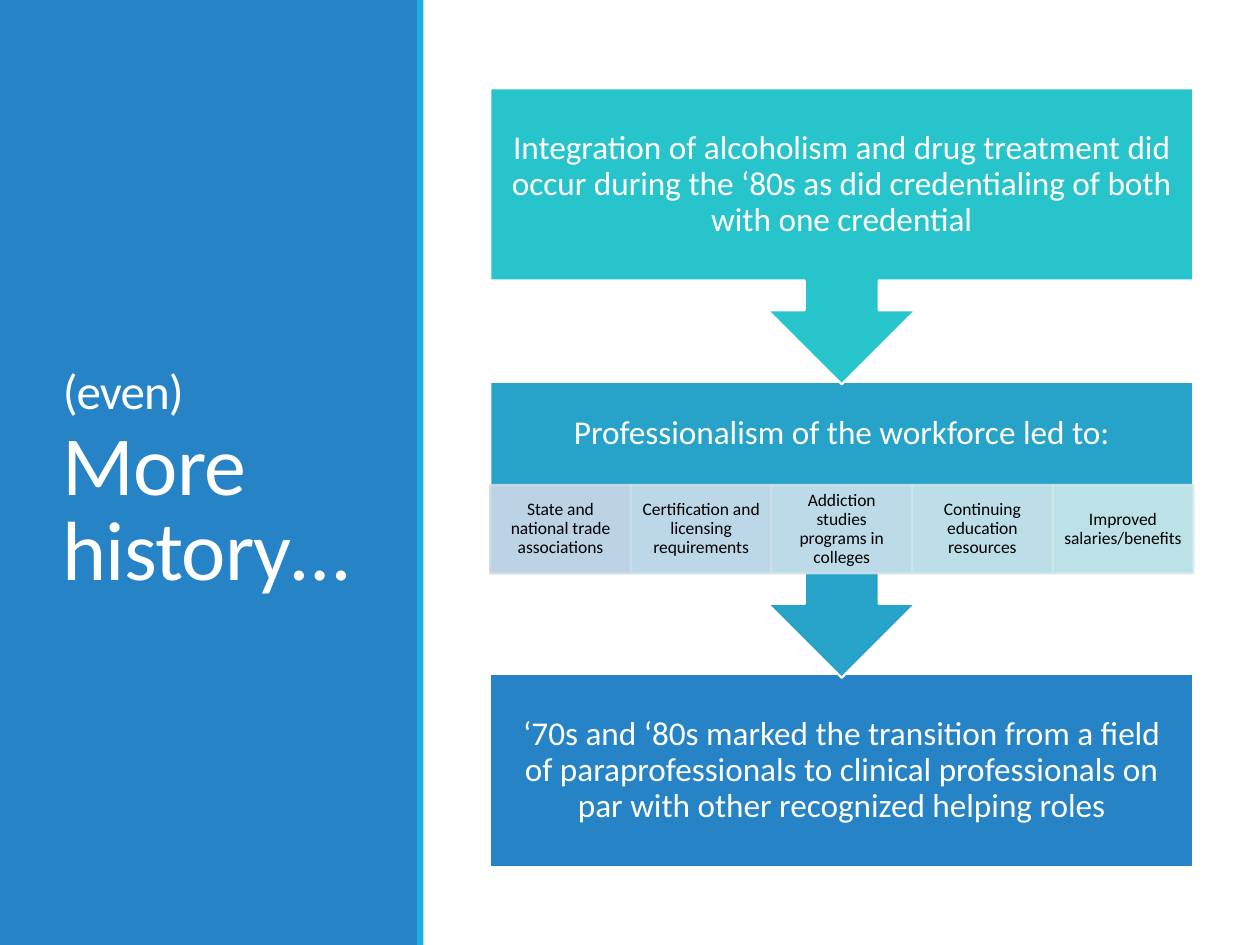
from dataclasses import dataclass

from lxml import etree
from pptx import Presentation
from pptx.dml.color import RGBColor
from pptx.enum import shapes, text
from pptx.oxml import ns
from pptx.util import Inches, Pt


@dataclass(frozen=True)
class Theme:
    font: str = "Calibri"
    white: str = "FFFFFF"
    black: str = "000000"
    blue: str = "2683C6"
    sky: str = "1CADE4"
    teal: str = "28C4CC"
    sea: str = "27A3C9"
    tints: tuple = ("CDD9EA", "CDDDEB", "CDE1EB", "CDE5EC", "CDE9EC")
    small: int = 28
    large: int = 48
    body: int = 19
    note: int = 10
    edge: float = 1.25


THEME = Theme()
KIND = shapes.MSO_SHAPE
LEFT, WIDE = 3.89, 5.58
CELLS = (
    "State and national trade associations",
    "Certification and licensing requirements",
    "Addiction studies programs in colleges",
    "Continuing education resources",
    "Improved salaries/benefits",
)


def paint(fill, color, alpha=None):
    fill.solid()
    fill.fore_color.rgb = RGBColor.from_string(color)
    if alpha is not None:
        tint = fill._xPr.find(".//" + ns.qn("a:srgbClr"))
        etree.SubElement(tint, ns.qn("a:alpha")).set("val", str(alpha * 1000))


def add_shape(slide, kind, box, color, edge=None, alpha=None):
    shape = slide.shapes.add_shape(kind, *map(Inches, box))
    shape.shadow.inherit = False
    paint(shape.fill, color, alpha)
    if edge:
        paint(shape.line.fill, edge, alpha)
        shape.line.width = Pt(THEME.edge)
    else:
        shape.line.fill.background()
    return shape


def write(shape, words, size, color, pads):
    frame = shape.text_frame
    frame.word_wrap = True
    frame.vertical_anchor = text.MSO_ANCHOR.MIDDLE
    (frame.margin_left, frame.margin_top,
     frame.margin_right, frame.margin_bottom) = map(Inches, pads)
    para = frame.paragraphs[0]
    para.text = words
    para.alignment = text.PP_ALIGN.CENTER
    para.line_spacing = 0.9
    para.font.name = THEME.font
    para.font.size = Pt(size)
    para.font.color.rgb = RGBColor.from_string(color)


def add_step(slide, kind, top, high, color, words, base=0.15):
    box = (LEFT, top, WIDE, high)
    shape = add_shape(slide, kind, box, color, THEME.white)
    write(shape, words, THEME.body, THEME.white, (0.15, 0.15, 0.15, base))


def add_cells(slide):
    wide = WIDE / len(CELLS)
    for i, (words, tint) in enumerate(zip(CELLS, THEME.tints)):
        box = (LEFT + i * wide, 3.85, wide, 0.7)
        cell = add_shape(slide, KIND.RECTANGLE, box, tint, tint, alpha=90)
        write(cell, words, THEME.note, THEME.black, (0.08, 0.01, 0.08, 0.01))


def add_title(slide):
    box = slide.shapes.add_textbox(*map(Inches, (0.4, 0.57, 2.53, 6.31)))
    frame = box.text_frame
    frame.word_wrap = True
    frame.vertical_anchor = text.MSO_ANCHOR.MIDDLE
    para = frame.paragraphs[0]
    para.line_spacing = 0.85
    para.font.name = THEME.font
    para.font.color.rgb = RGBColor.from_string(THEME.white)
    parts = (("(even)", THEME.small), (" More history…", THEME.large))
    for words, size in parts:
        run = para.add_run()
        run.text = words
        run.font.size = Pt(size)
        run.font._element.set("spc", "-50")


def main():
    deck = Presentation()
    deck.slide_width, deck.slide_height = Inches(10), Inches(7.5)
    slide = deck.slides.add_slide(deck.slide_layouts[6])
    add_shape(slide, KIND.RECTANGLE, (0, 0, 3.32, 7.5), THEME.blue)
    add_title(slide)
    add_shape(slide, KIND.RECTANGLE, (3.31, 0, 0.05, 7.5), THEME.sky)
    add_step(slide, KIND.RECTANGLE, 5.35, 1.53, THEME.blue,
             "‘70s and ‘80s marked the transition from a field of "
             "paraprofessionals to clinical professionals on par with "
             "other recognized helping roles")
    add_step(slide, KIND.DOWN_ARROW_CALLOUT, 3.03, 2.35, THEME.sea,
             "Professionalism of the workforce led to:", base=0.86)
    add_cells(slide)
    add_step(slide, KIND.DOWN_ARROW_CALLOUT, 0.7, 2.35, THEME.teal,
             "Integration of alcoholism and drug treatment did occur "
             "during the ‘80s as did credentialing of both with one "
             "credential")
    deck.save("out.pptx")


if __name__ == "__main__":
    main()
